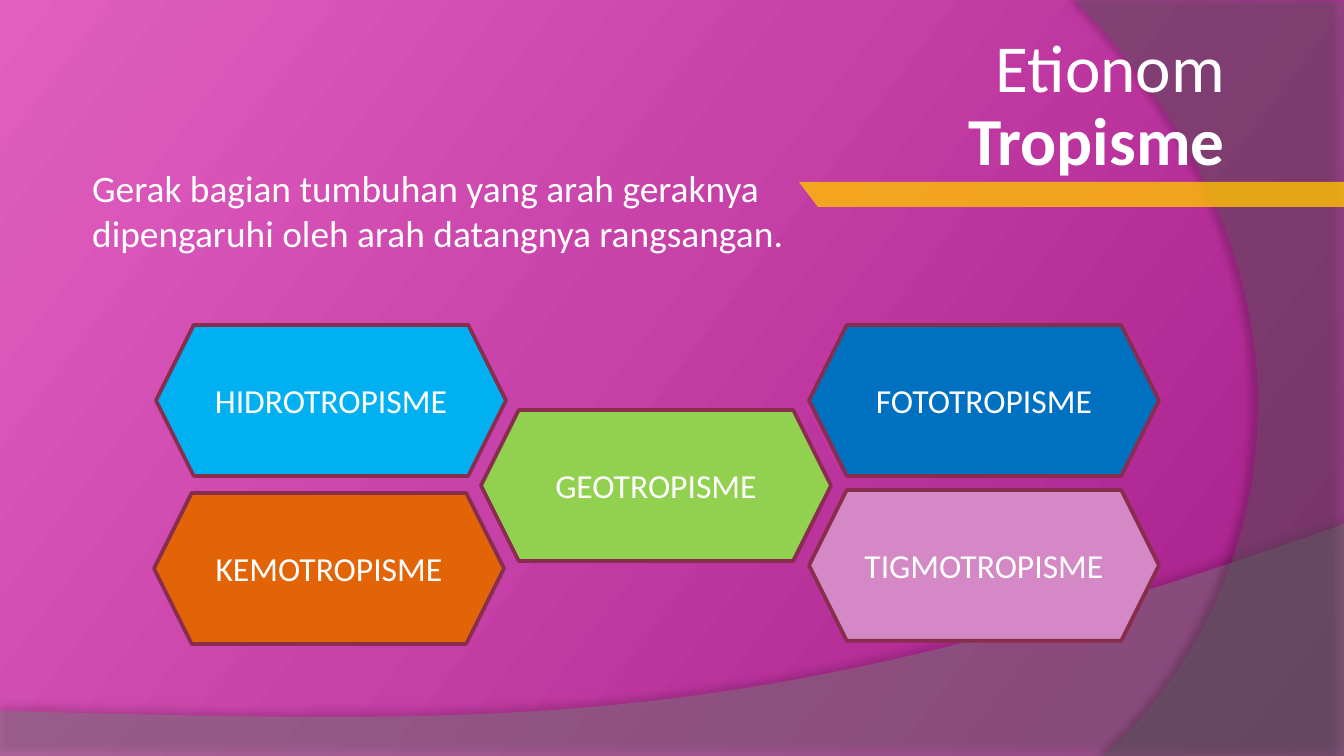
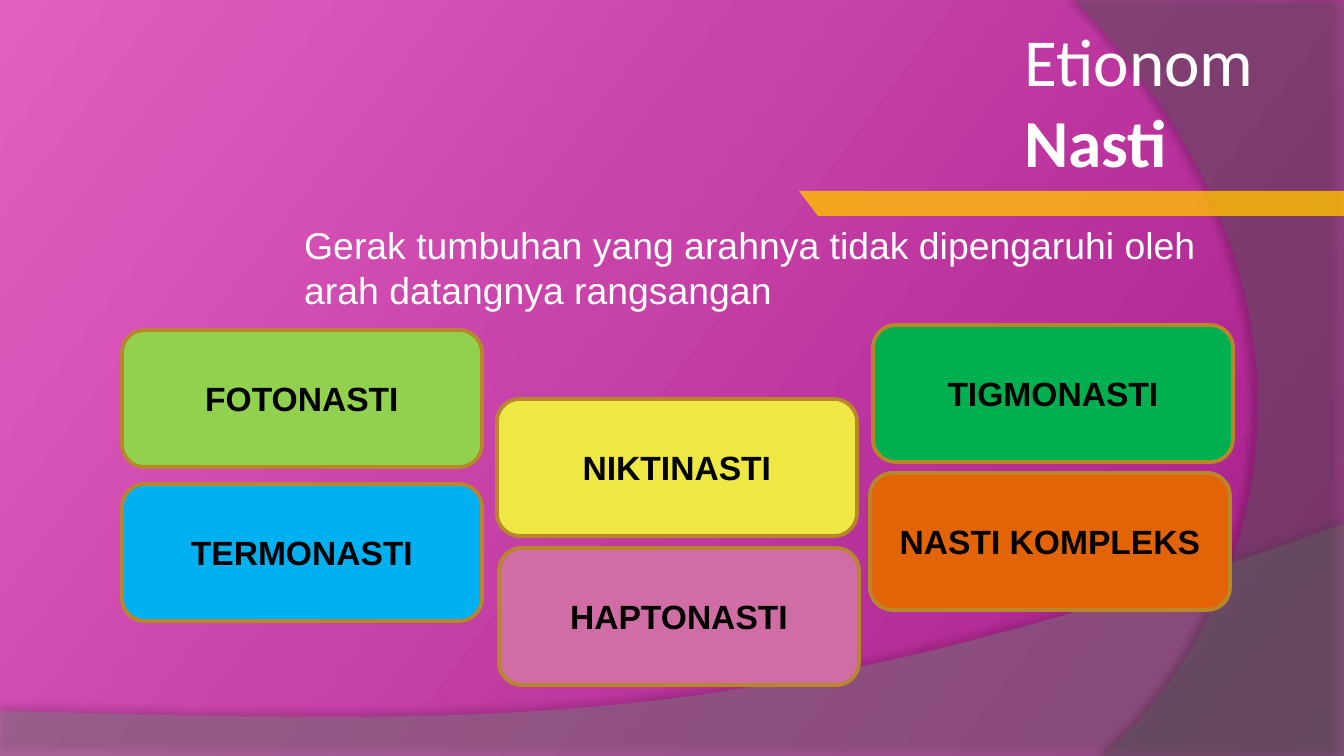
from lxml.etree import SubElement
from pptx import Presentation
from pptx.dml.color import RGBColor
from pptx.enum.shapes import MSO_SHAPE
from pptx.enum.text import MSO_ANCHOR, MSO_AUTO_SIZE, PP_ALIGN
from pptx.oxml.ns import qn
from pptx.util import Pt

EMU_PER_PX = 914400 / 134.4
SLIDE_WIDTH, SLIDE_HEIGHT = 1344, 756
WHITE, BLACK = "FFFFFF", "000000"
BACKGROUND = ("A51C89", "E25FC1")
WAVE_GREY, SIDE_GREY, BAND_GOLD = "7F7F7F", "5E5E5E", "FFC000"
HEXAGON_EDGE, CARD_EDGE = "882D4D", "B8872A"
HEADING_SIZE, BODY_SIZE, LABEL_SIZE = 36, 20, 18


def px(length):
    return round(length * EMU_PER_PX)


def color(value):
    return RGBColor.from_string(value)


def curve(start, first, second, end, steps=48):
    """Points of a cubic Bezier curve, without its start."""
    points = []
    for step in range(1, steps + 1):
        t = step / steps
        u = 1 - t
        weights = (u ** 3, 3 * u * u * t, 3 * u * t * t, t ** 3)
        points.append(tuple(
            sum(w * value for w, value in zip(weights, axis))
            for axis in zip(start, first, second, end)))
    return points


def add_outline(page, points, fill, opacity):
    corners = [(px(x), px(y)) for x, y in points]
    builder = page.shapes.build_freeform(*corners[0], scale=1.0)
    builder.add_line_segments(corners[1:], close=True)
    shape = builder.convert_to_shape()
    shape.shadow.inherit = False
    shape.line.fill.background()
    shape.fill.solid()
    shape.fill.fore_color.rgb = color(fill)
    tint = shape.fill._xPr.find(qn("a:solidFill"))[0]
    SubElement(tint, qn("a:alpha"), val=str(opacity * 1000))
    return shape


def add_shadow(shape, opacity, blur, distance, angle):
    effects = shape._element.spPr.find(qn("a:effectLst"))
    shadow = SubElement(effects, qn("a:outerShdw"), blurRad=str(Pt(blur)),
                        dist=str(Pt(distance)), dir=str(angle * 60000),
                        algn="ctr", rotWithShape="0")
    tint = SubElement(shadow, qn("a:srgbClr"), val=BLACK)
    SubElement(tint, qn("a:alpha"), val=str(opacity * 1000))


def add_span(para, text, font, size, ink, bold=False):
    span = para.add_run()
    span.text = text
    span.font.name = font
    span.font.size = Pt(size)
    span.font.bold = bold
    span.font.color.rgb = color(ink)


def add_box(page, left, top, width, height):
    box = page.shapes.add_textbox(px(left), px(top), px(width), px(height))
    box.text_frame.word_wrap = True
    box.text_frame.auto_size = MSO_AUTO_SIZE.SHAPE_TO_FIT_TEXT
    return box.text_frame


def add_heading(frame, topic):
    para = frame.paragraphs[0]
    add_span(para, "Etionom", "Calibri", HEADING_SIZE, WHITE)
    para.add_line_break()
    add_span(para, topic, "Calibri", HEADING_SIZE, WHITE, bold=True)
    return para


def add_definition(page, left, top, width, font, lines):
    frame = add_box(page, left, top, width, 103)
    for index, line in enumerate(lines):
        para = frame.add_paragraph() if index else frame.paragraphs[0]
        add_span(para, line, font, BODY_SIZE, WHITE)


def add_labels(page, kind, size, edge, font, ink, bold, labels):
    """Equal shapes, each given as text, fill, left and top."""
    for text, fill, left, top in labels:
        shape = page.shapes.add_shape(kind, px(left), px(top),
                                      *(px(side) for side in size))
        shape.shadow.inherit = False
        shape.fill.solid()
        shape.fill.fore_color.rgb = color(fill)
        shape.line.color.rgb = color(edge)
        shape.line.width = Pt(2)
        shape.text_frame.word_wrap = True
        shape.text_frame.vertical_anchor = MSO_ANCHOR.MIDDLE
        para = shape.text_frame.paragraphs[0]
        para.alignment = PP_ALIGN.CENTER
        add_span(para, text, font, LABEL_SIZE, ink, bold)


def add_band(page, top):
    bottom = top + 25
    add_outline(page, [(SLIDE_WIDTH, top), (799, top), (818, bottom),
                       (SLIDE_WIDTH, bottom)], BAND_GOLD, 80)


def add_page(deck):
    page = deck.slides.add_slide(deck.slide_layouts[6])
    fill = page.background.fill
    fill.gradient()
    fill.gradient_angle = 143
    for stop, value in zip(fill.gradient_stops, BACKGROUND):
        stop.color.rgb = color(value)
    right_edge, left_edge = (SLIDE_WIDTH, 524), (0, 711)
    wave = add_outline(
        page, [(0, SLIDE_HEIGHT), (SLIDE_WIDTH, SLIDE_HEIGHT), right_edge]
        + curve(right_edge, (751, 735), (526, 724), left_edge), WAVE_GREY, 45)
    add_shadow(wave, 35, 4, 3.5, 270)
    foot, head = (1103, SLIDE_HEIGHT), (1075, 0)
    side = add_outline(
        page, [(SLIDE_WIDTH, 1), (SLIDE_WIDTH, SLIDE_HEIGHT), foot]
        + curve(foot, (1257, 624), (1368, 302), head), SIDE_GREY, 40)
    add_shadow(side, 45, 4, 4, 180)
    return page


def add_tropisme(deck):
    page = add_page(deck)
    add_definition(page, 79, 159, 910, "Calibri",
                   ["Gerak bagian tumbuhan yang arah geraknya",
                    "dipengaruhi oleh arah datangnya rangsangan."])
    add_labels(page, MSO_SHAPE.HEXAGON, (350, 151), HEXAGON_EDGE,
               "Calibri", WHITE, False, [
                   ("HIDROTROPISME", "00B0F0", 156, 325),
                   ("GEOTROPISME", "92D050", 481, 410),
                   ("FOTOTROPISME", "0070C0", 809, 325),
                   ("KEMOTROPISME", "E36406", 154, 493),
                   ("TIGMOTROPISME", "D488C5", 809, 490)])
    frame = add_box(page, 809, 28, 423, 159)
    frame.auto_size = MSO_AUTO_SIZE.NONE
    frame.vertical_anchor = MSO_ANCHOR.MIDDLE
    frame.margin_left = frame.margin_right = px(7)
    frame.margin_top = frame.margin_bottom = px(7)
    para = add_heading(frame, "Tropisme")
    para.alignment = PP_ALIGN.RIGHT
    para.line_spacing = 0.9
    add_band(page, 182)


def add_nasti(deck):
    page = add_page(deck)
    add_definition(page, 291, 216, 984, "Arial",
                   ["Gerak tumbuhan yang arahnya tidak dipengaruhi oleh "
                    "arah datangnya rangsangan"])
    add_band(page, 191)
    add_heading(add_box(page, 1011, 13, 317, 176), "Nasti")
    add_labels(page, MSO_SHAPE.ROUNDED_RECTANGLE, (360, 137), CARD_EDGE,
               "Arial", BLACK, True, [
                   ("FOTONASTI", "92D050", 122, 330),
                   ("NIKTINASTI", "EFE743", 497, 399),
                   ("TIGMONASTI", "00B050", 873, 325),
                   ("TERMONASTI", "00B0F0", 122, 484),
                   ("HAPTONASTI", "CF6DA4", 499, 548),
                   ("NASTI KOMPLEKS", "E36406", 870, 473)])


def main():
    deck = Presentation()
    deck.slide_width = px(SLIDE_WIDTH)
    deck.slide_height = px(SLIDE_HEIGHT)
    add_tropisme(deck)
    add_nasti(deck)
    deck.save("out.pptx")


if __name__ == "__main__":
    main()
